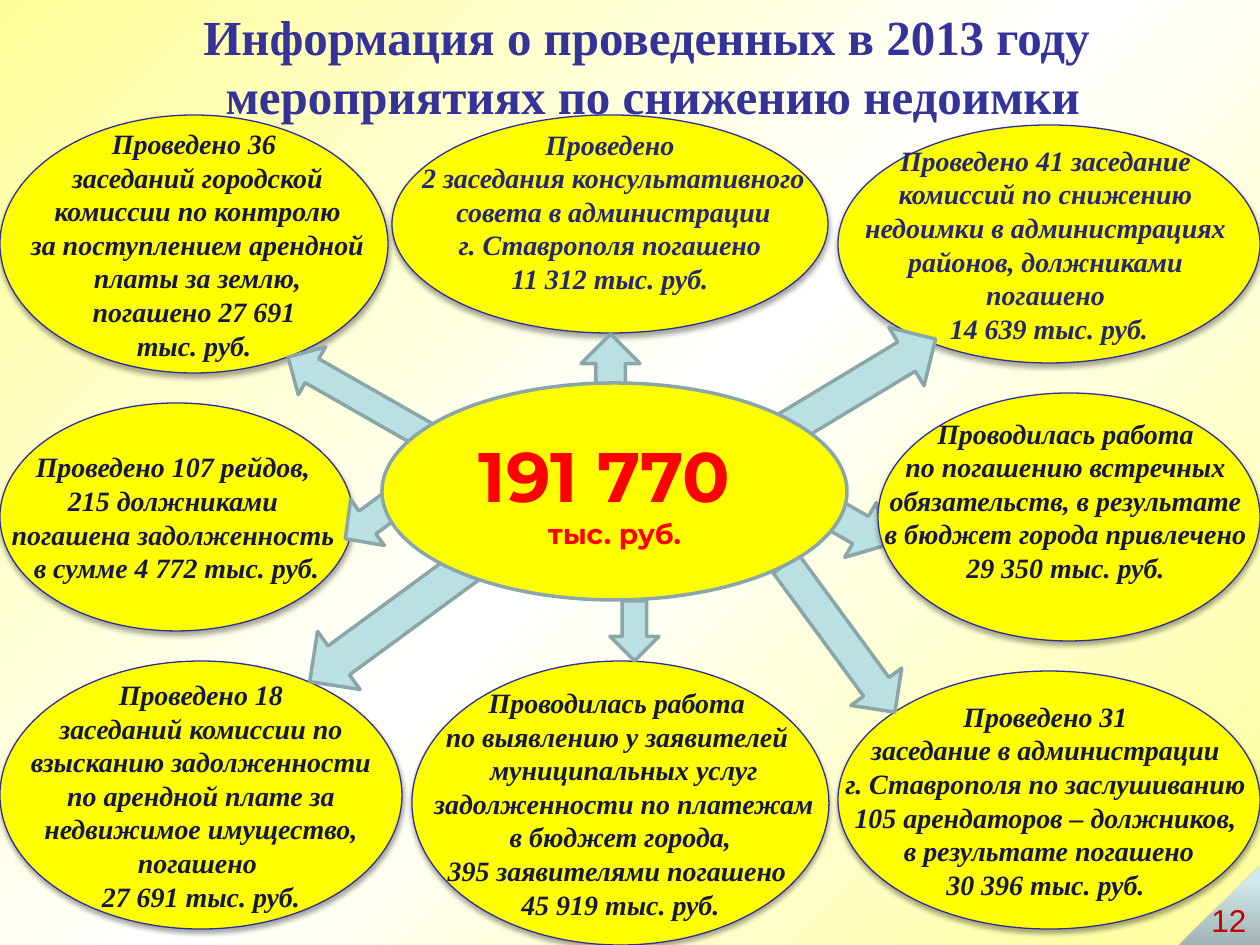
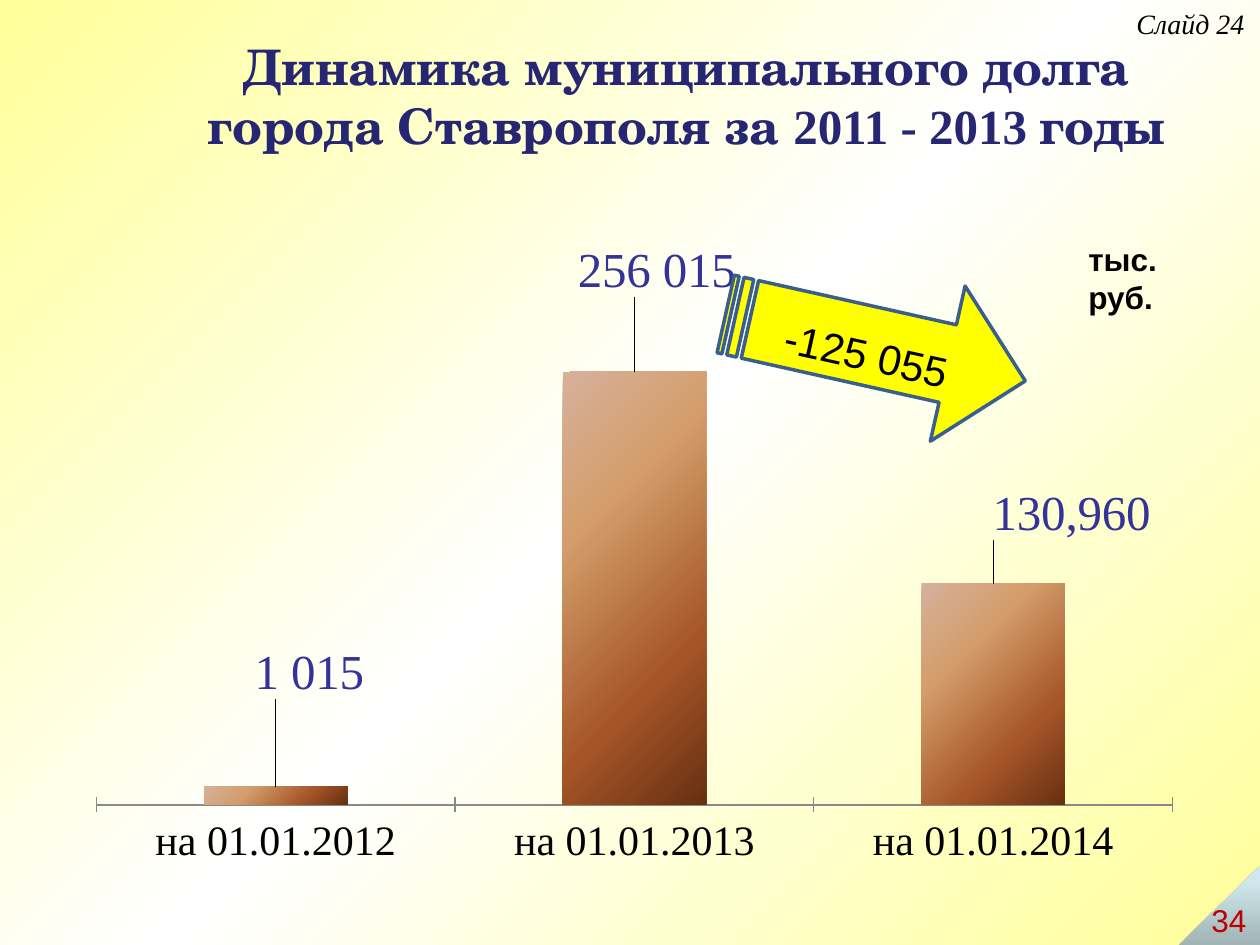
from lxml.etree import SubElement
from pptx import Presentation
from pptx.chart.data import CategoryChartData
from pptx.dml.color import RGBColor
from pptx.enum.chart import XL_CHART_TYPE, XL_LABEL_POSITION, XL_TICK_MARK
from pptx.enum.shapes import MSO_SHAPE
from pptx.enum.text import MSO_ANCHOR, PP_ALIGN
from pptx.oxml import parse_xml
from pptx.oxml.ns import nsdecls, qn
from pptx.util import Pt

SCALE = 914400 / 126  # EMU in one px

# Colours
YELLOW = RGBColor(0xFF, 0xFF, 0x00)
WHITE = RGBColor(0xFF, 0xFF, 0xFF)
CREAM = RGBColor(0xFF, 0xFF, 0x99)
BLACK = RGBColor(0x00, 0x00, 0x00)
RED = RGBColor(0xFF, 0x00, 0x00)
WINE = RGBColor(0xC0, 0x00, 0x00)
INDIGO = RGBColor(0x33, 0x33, 0x99)
EDGE = RGBColor(0x2F, 0x2F, 0x98)
NAVY = RGBColor(0x26, 0x26, 0x73)
DARK = RGBColor(0x17, 0x17, 0x45)
AQUA = RGBColor(0xBB, 0xE0, 0xE3)
SLATE = RGBColor(0x8A, 0xA6, 0xA8)
STEEL = RGBColor(0x3A, 0x5F, 0x8C)
GREY = RGBColor(0x89, 0x89, 0x89)

# Gradients: angle, then position and colour of each stop
PAPER = 45, [(0, CREAM), (50, WHITE), (100, CREAM)]
FOLD = 270, [(0, RGBColor(0xA0, 0xB3, 0xB5)), (80, RGBColor(0xD0, 0xE8, 0xEB)),
             (100, RGBColor(0xD1, 0xEA, 0xEC))]
BRONZE = 45, [(0, RGBColor(0xD6, 0xB1, 0x9C)), (30, RGBColor(0xD4, 0x9E, 0x6C)),
              (70, RGBColor(0xA6, 0x55, 0x28)), (100, RGBColor(0x66, 0x30, 0x12))]

# Text formats
TIMES = "Times New Roman"
TITLE = dict(name=TIMES, size=Pt(28), bold=True, color=INDIGO)
HEAD = dict(TITLE, name="TeX Gyre Schola", color=NAVY)
FACT = dict(name=TIMES, size=Pt(16), bold=True, italic=True, color=DARK)
TOP = dict(FACT, color=NAVY)
TOTAL = dict(name="Montserrat", size=Pt(40), bold=True, color=RED)
NOTE = dict(name=TIMES, size=Pt(16), italic=True, color=BLACK)
UNIT = dict(name="Arial", size=Pt(18), bold=True, color=BLACK)
PAGE = dict(name="Arial", size=Pt(18), color=WINE)
DROP = dict(name="Arial", size=Pt(24), color=BLACK)
BASE = dict(name="Arial", size=Pt(18), color=BLACK)
AXIS = dict(name=TIMES, size=Pt(24), color=BLACK)
VALUE = dict(name=TIMES, size=Pt(28), color=INDIGO)


def px(*sizes):
    return [round(size * SCALE) for size in sizes]


def style(font, form):
    for key, value in form.items():
        if key == "color":
            font.color.rgb = value
        else:
            setattr(font, key, value)


def shade(fill, owner, blend):
    """Give a fill the stops of a gradient."""
    angle, stops = blend
    fill.gradient()
    fill.gradient_angle = 360 - angle
    row = owner.element.xpath(".//a:gsLst")[0]
    for old in list(row):
        row.remove(old)
    for pos, color in stops:
        stop = SubElement(row, qn("a:gs"), pos=str(pos * 1000))
        SubElement(stop, qn("a:srgbClr"), val=str(color))


class Deck:
    def __init__(self):
        self.show = Presentation()
        self.show.slide_width, self.show.slide_height = px(1260, 945)
        self.slide = None

    def page(self):
        self.slide = self.show.slides.add_slide(self.show.slide_layouts[6])
        shade(self.slide.background.fill, self.slide, PAPER)

    def label(self, shape, lines, align=PP_ALIGN.CENTER, anchor=MSO_ANCHOR.MIDDLE, wrap=False):
        """Each line is a list of (text, format) runs."""
        frame = shape.text_frame
        frame.word_wrap = wrap
        frame.vertical_anchor = anchor
        for num, line in enumerate(lines):
            para = frame.add_paragraph() if num else frame.paragraphs[0]
            para.alignment = align
            for words, form in line:
                run = para.add_run()
                run.text = words
                style(run.font, form)
        return frame

    def text(self, spot, lines, **opts):
        opts = dict(dict(anchor=MSO_ANCHOR.TOP), **opts)
        self.label(self.slide.shapes.add_textbox(*px(*spot)), lines, **opts)

    def shape(self, kind, spot, fill, line=None, width=2, turn=0, cast=False):
        item = self.slide.shapes.add_shape(kind, *px(*spot))
        item.rotation = turn
        item.shadow.inherit = False
        if isinstance(fill, tuple) and not isinstance(fill, RGBColor):
            shade(item.fill, item, fill)
        else:
            item.fill.solid()
            item.fill.fore_color.rgb = fill
        if line is None:
            item.line.fill.background()
        else:
            item.line.color.rgb = line
            item.line.width = Pt(width)
        if cast:
            effect = item.element.xpath(".//a:effectLst")[0]
            drop = SubElement(effect, qn("a:outerShdw"), blurRad=str(Pt(3.1)),
                              dist=str(Pt(1.8)), dir="5400000", rotWithShape="0")
            tint = SubElement(drop, qn("a:srgbClr"), val=str(BLACK))
            SubElement(tint, qn("a:alpha"), val="35000")
        return item

    def bubble(self, spot, words, form=FACT, anchor=MSO_ANCHOR.MIDDLE, lift=6):
        item = self.shape(MSO_SHAPE.OVAL, spot, YELLOW, EDGE, 0.75, cast=True)
        frame = self.label(item, [[(line, form)] for line in words.split("\n")], anchor=anchor)
        frame.margin_bottom = px(lift)[0]

    def arrow(self, spot, turn):
        self.shape(MSO_SHAPE.DOWN_ARROW, spot, AQUA, SLATE, turn=turn)

    def corner(self, number):
        fold = self.shape(MSO_SHAPE.RIGHT_TRIANGLE, (1179, 866, 81, 79), FOLD, cast=True)
        fold.element.xpath(".//a:xfrm")[0].set("flipH", "1")
        self.text((1199, 895, 61, 50), [[(number, PAGE)]], align=PP_ALIGN.LEFT)

    def place(self, node, after, x, y, size=None):
        """Set a manual chart layout right after a child of the node."""
        inner = '<c:layoutTarget val="inner"/><c:xMode val="edge"/><c:yMode val="edge"/>'
        area = '<c:w val="%s"/><c:h val="%s"/>' % size if size else ""
        for old in node.findall(qn("c:layout")):
            node.remove(old)
        node.insert(after, parse_xml(
            f'<c:layout {nsdecls("c")}><c:manualLayout>{inner if size else ""}'
            f'<c:x val="{x}"/><c:y val="{y}"/>{area}</c:manualLayout></c:layout>'))

    def chart(self, spot, cats, values, notes, shifts):
        data = CategoryChartData(number_format="#,##0")
        data.categories = cats
        data.add_series("Series 1", values)
        kind = XL_CHART_TYPE.COLUMN_CLUSTERED
        chart = self.slide.shapes.add_chart(kind, *px(*spot), data).chart
        chart.has_legend = chart.has_title = False
        style(chart.font, BASE)
        # Axes
        axis = chart.category_axis
        axis.major_tick_mark = XL_TICK_MARK.CROSS
        axis.format.line.color.rgb = GREY
        style(axis.tick_labels.font, AXIS)
        scale = chart.value_axis
        scale.minimum_scale, scale.maximum_scale = 0, 300000
        scale.has_major_gridlines = scale.visible = False
        # Columns and their labels
        plot = chart.plots[0]
        plot.vary_by_categories = False
        plot.gap_width = 150
        series = plot.series[0]
        shade(series.format.fill, chart, BRONZE)
        labels = series.data_labels
        labels.show_value = True
        labels.number_format = "#,##0"
        labels.number_format_is_linked = False
        labels.position = XL_LABEL_POSITION.OUTSIDE_END
        style(labels.font, VALUE)
        for num, note in enumerate(notes):
            label = series.points[num].data_label
            if note:
                label.text_frame.text = note
                style(label.text_frame.paragraphs[0].runs[0].font, VALUE)
            else:
                style(label.font, VALUE)
            label.position = XL_LABEL_POSITION.OUTSIDE_END
        for node, shift in zip(chart.element.xpath(".//c:dLbl"), shifts):
            self.place(node, 1, *shift)
        self.place(chart.element.xpath(".//c:plotArea")[0], 0, 0.02, 0.08, (0.96, 0.81))


def work(deck):
    """Arrears slide: eight measures around the total."""
    deck.page()
    deck.arrow((829, 500, 63, 60), 300)
    # Measures
    deck.bubble((412, 661, 417, 284),
                "Проводилась работа \nпо выявлению у заявителей \n муниципальных услуг\n"
                " задолженности по платежам\n в бюджет города, \n"
                "395 заявителями погашено \n45 919 тыс. руб.")
    deck.bubble((392, 115, 436, 218),
                "Проведено\n 2 заседания консультативного\n совета в администрации\n"
                "г. Ставрополя погашено\n11 312 тыс. руб.", TOP, MSO_ANCHOR.BOTTOM)
    deck.bubble((838, 671, 422, 258),
                "Проведено 31 \nзаседание в администрации \nг. Ставрополя по заслушиванию \n"
                "105 арендаторов – должников, \nв результате погашено\n30 396 тыс. руб. ")
    deck.bubble((838, 125, 422, 238),
                "Проведено 41 заседание \nкомиссий по снижению \nнедоимки в администрациях \n"
                "районов, должниками \nпогашено \n14 639 тыс. руб.", TOP)
    deck.bubble((0, 115, 388, 258),
                "Проведено 36\n заседаний городской\n комиссии по контролю\n"
                " за поступлением арендной\n платы за землю,\nпогашено 27 691\nтыс. руб.")
    deck.bubble((0, 661, 402, 268),
                "Проведено 18\n заседаний комиссии по \nвзысканию задолженности\n"
                " по арендной плате за \nнедвижимое имущество,\nпогашено \n27 691 тыс. руб.")
    deck.bubble((0, 403, 353, 228),
                "Проведено 107 рейдов, \n215 должниками \nпогашена задолженность \n"
                "в сумме 4 772 тыс. руб.")
    deck.bubble((878, 393, 382, 248),
                "Проводилась работа \nпо погашению встречных \nобязательств, в результате \n"
                "в бюджет города привлечено \n29 350 тыс. руб. ", lift=40)
    # Arrows from the total
    for *spot, turn in [(610, 601, 49, 60, 0), (813, 289, 68, 207, 238.9),
                        (340, 311, 55, 183, 119.7), (383, 466, 72, 271, 53.7),
                        (581, 334, 59, 79, 180), (339, 495, 57, 55, 53.7),
                        (809, 546, 63, 184, 323.7)]:
        deck.arrow(spot, turn)
    # Total
    total = deck.shape(MSO_SHAPE.OVAL, (382, 383, 465, 217), YELLOW, SLATE)
    deck.label(total, [[("191 770 ", TOTAL)], [("тыс. руб.", dict(TOTAL, size=Pt(16)))]],
               wrap=True)
    deck.corner("12")
    deck.text((186, 0, 921, 131), [[("Информация о проведенных в 2013 году", TITLE)],
                                   [(" мероприятиях по снижению недоимки", TITLE)]])


def debt(deck):
    """Debt slide: column chart and the drop."""
    deck.page()
    deck.text((178, 39, 1017, 113),
              [[("Динамика муниципального долга города Ставрополя за ", HEAD),
                ("2011 - 2013 ", dict(HEAD, name=TIMES)), ("годы", HEAD)]],
              anchor=MSO_ANCHOR.MIDDLE, wrap=True)
    deck.text((1124, 0, 135, 47), [[("Слайд 24", NOTE)]], align=PP_ALIGN.LEFT)
    deck.text((1076, 234, 152, 50), [[("тыс. руб.", UNIT)]], align=PP_ALIGN.LEFT, wrap=True)
    deck.chart((74, 244, 1121, 630), ["на 01.01.2012", "на 01.01.2013", "на 01.01.2014"],
               [11015, 256015, 130960], ["1 015", "256 015", None],
               [(0.03, -0.13), (0.02, -0.11), (0.07, -0.06)])
    drop = deck.shape(MSO_SHAPE.STRIPED_RIGHT_ARROW, (722, 268, 307, 159), YELLOW, STEEL,
                      turn=12.6)
    deck.label(drop, [[("-125 055", DROP)]], anchor=MSO_ANCHOR.BOTTOM, wrap=True)
    deck.corner("34")


def main():
    deck = Deck()
    work(deck)
    debt(deck)
    deck.show.save("out.pptx")


if __name__ == "__main__":
    main()
